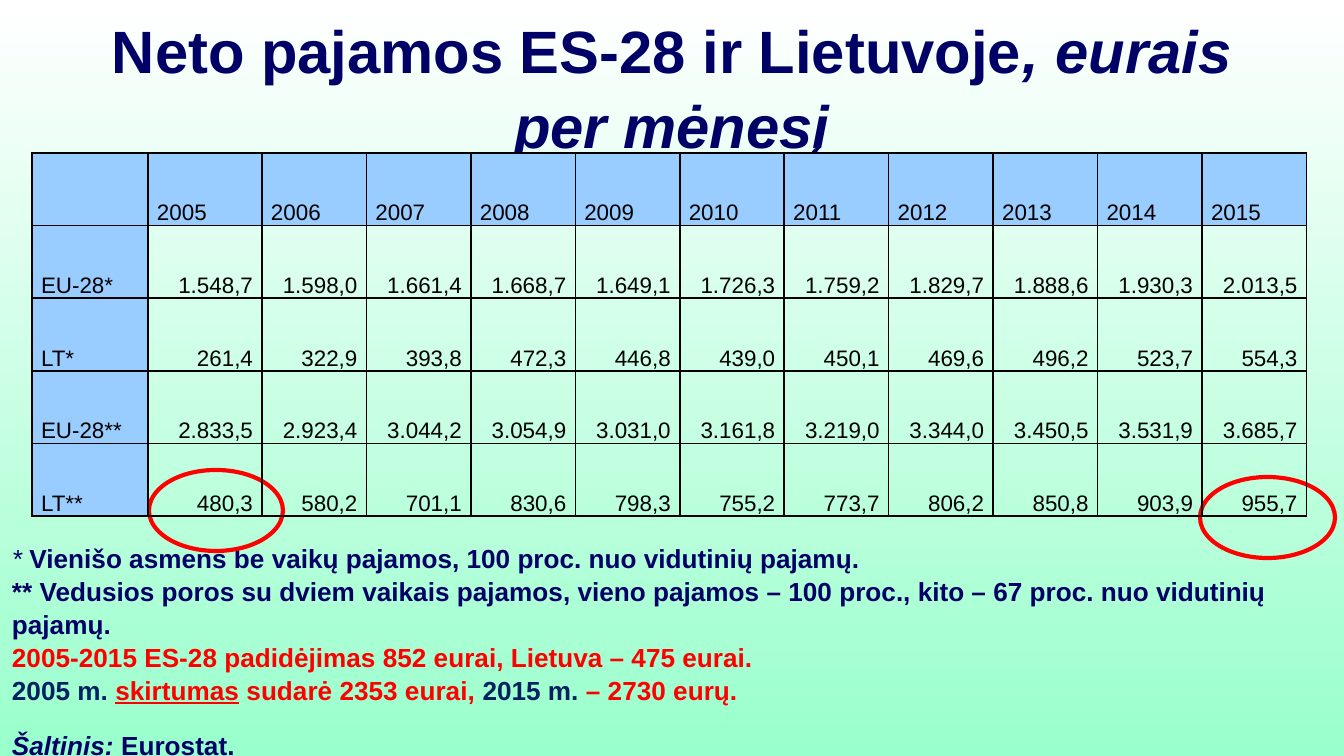
import dataclasses

import pptx
import pptx.dml.color
import pptx.enum.shapes
import pptx.enum.text
import pptx.oxml
import pptx.oxml.ns
import pptx.util

PX = 914400 / 134.4  # EMU in one px
ALIGN = pptx.enum.text.PP_ALIGN
ANCHOR = pptx.enum.text.MSO_ANCHOR


@dataclasses.dataclass(frozen=True)
class Theme:
    font: str = "Arial"
    navy: str = "000066"
    deep_blue: str = "002060"
    red: str = "FF0000"
    black: str = "000000"
    header: str = "99CCFF"
    sky_top: str = "FFFFFF"
    sky_bottom: str = "99FFCC"
    title_size: float = 32
    note_size: float = 14
    table_size: float = 12
    ring_line: float = 2.25
    border_line: float = 1


THEME = Theme()

TITLE = [("Neto pajamos ES-28 ir Lietuvoje", {}), (", eurais per mėnesį", {"italic": True})]

YEARS = [str(year) for year in range(2005, 2016)]
INCOME = {
    "EU-28*": "1.548,7 1.598,0 1.661,4 1.668,7 1.649,1 1.726,3 1.759,2 1.829,7 1.888,6 1.930,3 2.013,5",
    "LT*": "261,4 322,9 393,8 472,3 446,8 439,0 450,1 469,6 496,2 523,7 554,3",
    "EU-28**": "2.833,5 2.923,4 3.044,2 3.054,9 3.031,0 3.161,8 3.219,0 3.344,0 3.450,5 3.531,9 3.685,7",
    "LT**": "480,3 580,2 701,1 830,6 798,3 755,2 773,7 806,2 850,8 903,9 955,7",
}

RED = {"color": THEME.red}
BLUE = {"color": THEME.deep_blue}
# Each note: space before in points, then its spans
NOTES = [
    (0, [("* ", {"italic": True, "bold": False}),
         ("Vienišo asmens be vaikų pajamos, 100 proc. nuo vidutinių pajamų.", {})]),
    (0, [("** Vedusios poros su dviem vaikais pajamos, vieno pajamos – 100 proc., "
          "kito – 67 proc. nuo vidutinių pajamų.", {})]),
    (0, [("2005-2015 ES-28 padidėjimas 852 eurai, Lietuva – 475 eurai.", RED)]),
    (0, [("2005 m. ", BLUE), ("skirtumas", {**RED, "underline": True}),
         (" sudarė 2353 eurai, ", RED), ("2015 m.", BLUE), (" – 2730 eurų.", RED)]),
    (12, [("Šaltinis: ", {"italic": True}), ("Eurostat.", {})]),
]


def emu(px):
    return pptx.util.Emu(round(px * PX))


def rgb(value):
    return pptx.dml.color.RGBColor.from_string(value)


def set_values(target, values):
    for name, value in values.items():
        setattr(target, name, value)


def set_frame(frame, inset, **values):
    """Set insets (left and right, top and bottom) and other frame values."""
    side, end = (emu(px) for px in inset)
    set_values(frame, {"margin_left": side, "margin_right": side,
                       "margin_top": end, "margin_bottom": end, **values})


def write_spans(para, spans, base, **para_values):
    set_values(para, para_values)
    for text, changes in spans:
        values = {"name": THEME.font, **base, **changes}
        color = values.pop("color")
        span = para.add_run()
        span.text = text
        set_values(span.font, values)
        span.font.color.rgb = rgb(color)


def paint_background(page):
    fill = page.background.fill
    fill.gradient()
    fill.gradient_angle = 270
    for stop, color in zip(fill.gradient_stops, (THEME.sky_top, THEME.sky_bottom)):
        stop.color.rgb = rgb(color)


def add_title(page, box):
    title = page.shapes.title
    set_values(title, dict(zip(("left", "top", "width", "height"), map(emu, box))))
    set_frame(title.text_frame, (12, 5), word_wrap=True, vertical_anchor=ANCHOR.TOP,
              auto_size=pptx.enum.text.MSO_AUTO_SIZE.NONE)
    base = {"size": pptx.util.Pt(THEME.title_size), "bold": True, "color": THEME.navy}
    write_spans(title.text_frame.paragraphs[0], TITLE, base,
                alignment=ALIGN.CENTER, line_spacing=1.05)


def add_notes(page, box):
    frame = page.shapes.add_textbox(*map(emu, box)).text_frame
    set_frame(frame, (12, 5), word_wrap=True, vertical_anchor=ANCHOR.TOP)
    base = {"size": pptx.util.Pt(THEME.note_size), "bold": True, "color": THEME.navy}
    for index, (gap, spans) in enumerate(NOTES):
        para = frame.add_paragraph() if index else frame.paragraphs[0]
        write_spans(para, spans, base, line_spacing=1.05, space_before=pptx.util.Pt(gap))


def add_ring(page, box):
    ring = page.shapes.add_shape(pptx.enum.shapes.MSO_SHAPE.OVAL, *map(emu, box))
    ring.shadow.inherit = False
    ring.fill.background()
    ring.line.color.rgb = rgb(THEME.red)
    ring.line.width = pptx.util.Pt(THEME.ring_line)


def add_borders(cell):
    properties = cell._tc.get_or_add_tcPr()
    width = pptx.util.Pt(THEME.border_line)
    for side in "LRTB":
        properties.append(pptx.oxml.parse_xml(
            f'<a:ln{side} {pptx.oxml.ns.nsdecls("a")} w="{width}"><a:solidFill>'
            f'<a:srgbClr val="{THEME.black}"/></a:solidFill></a:ln{side}>'))


def add_income_table(page, box):
    rows = [["", *YEARS]] + [[name, *values.split()] for name, values in INCOME.items()]
    table = page.shapes.add_table(len(rows), len(rows[0]), *map(emu, box)).table
    set_values(table, {"first_row": False, "horz_banding": False})

    # The first two columns are wider; the others share the rest
    wide = [116, 114]
    rest = (box[2] - sum(wide)) / (len(rows[0]) - len(wide))
    for index, column in enumerate(table.columns):
        column.width = emu(wide[index] if index < len(wide) else rest)
    for row in table.rows:
        row.height = emu(box[3] / len(rows))

    base = {"size": pptx.util.Pt(THEME.table_size), "color": THEME.black}
    for row_index, row in enumerate(rows):
        for column_index, text in enumerate(row):
            cell = table.cell(row_index, column_index)
            heading = row_index == 0 or column_index == 0
            set_frame(cell, (9, 0), vertical_anchor=ANCHOR.BOTTOM)
            add_borders(cell)
            if heading:
                cell.fill.solid()
                cell.fill.fore_color.rgb = rgb(THEME.header)
            else:
                cell.fill.background()
            if text:
                write_spans(cell.text_frame.paragraphs[0], [(text, {})], base, line_spacing=1.15,
                            alignment=ALIGN.LEFT if heading else ALIGN.RIGHT)


def main():
    deck = pptx.Presentation()
    set_values(deck, {"slide_width": emu(1344), "slide_height": emu(756)})
    page = deck.slides.add_slide(deck.slide_layouts.get_by_name("Title Only"))

    paint_background(page)
    add_title(page, (67, 5, 1210, 127))
    add_notes(page, (0, 536, 1322, 220))
    # Rings around the first and last income of the bottom row
    for box in ((1200, 477, 135, 81), (149, 470, 134, 81)):
        add_ring(page, box)
    add_income_table(page, (32, 153, 1275, 363))
    deck.save("out.pptx")


if __name__ == "__main__":
    main()
